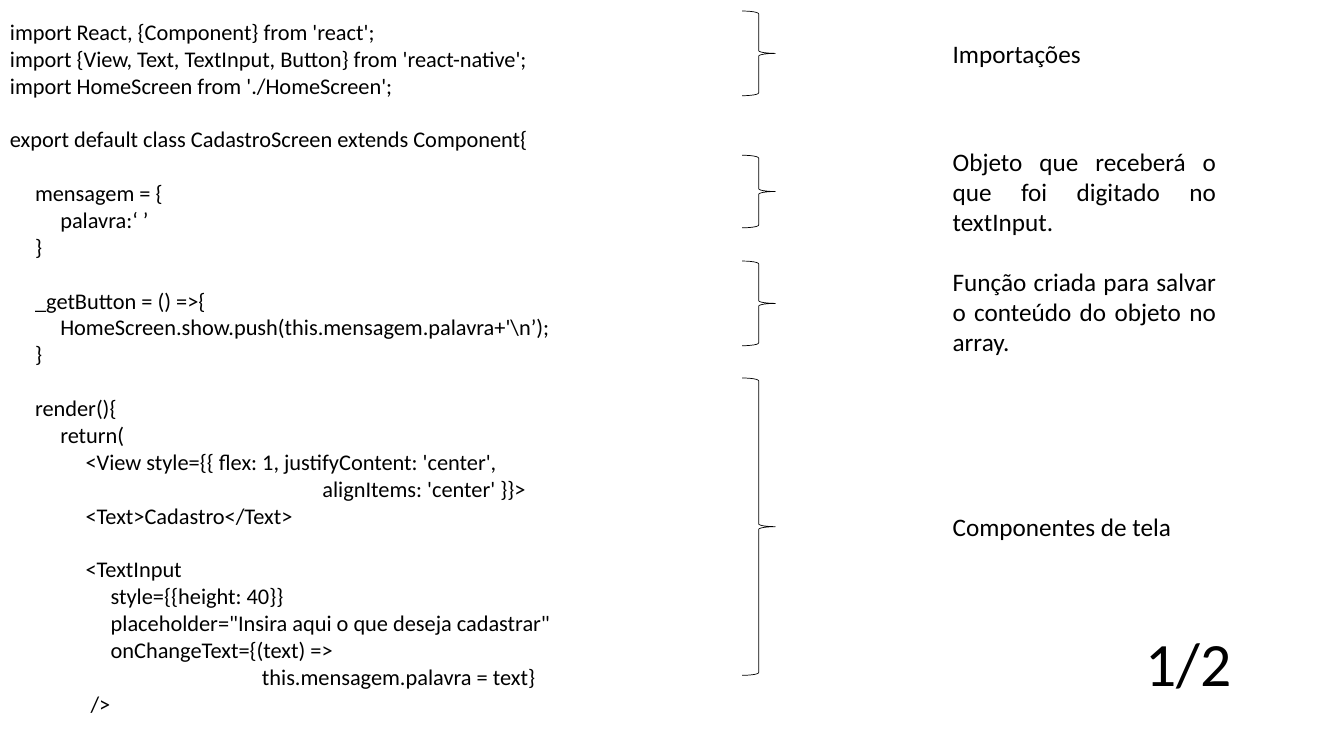
"""Build the slide that annotates the parts of a CadastroScreen component."""
from dataclasses import dataclass

from pptx import Presentation
from pptx.dml.color import RGBColor
from pptx.enum.shapes import MSO_SHAPE
from pptx.enum.text import MSO_ANCHOR, PP_ALIGN
from pptx.slide import Slide
from pptx.text.text import _Paragraph
from pptx.util import Inches, Pt

RIGHT_BRACE = MSO_SHAPE.RIGHT_BRACE
LEFT, CENTER, JUSTIFY = PP_ALIGN.LEFT, PP_ALIGN.CENTER, PP_ALIGN.JUSTIFY
TOP, MIDDLE = MSO_ANCHOR.TOP, MSO_ANCHOR.MIDDLE
BLACK = RGBColor(0x00, 0x00, 0x00)
WHITE = RGBColor(0xFF, 0xFF, 0xFF)
FONT = "Calibri"
TITLE_ONLY_LAYOUT = 5
COLUMN_WIDTH = 0.05
BLANK_LINE = Pt(19.2)


@dataclass
class CodeLine:
    text: str
    column: int = 0
    starts_block: bool = False


@dataclass
class Annotation:
    text: str
    brace_top: float
    brace_height: float
    text_top: float
    text_width: float
    text_height: float
    alignment: PP_ALIGN = LEFT


CODE_LINES = [
    CodeLine("import React, {Component} from 'react';"),
    CodeLine("import {View, Text, TextInput, Button} from 'react-native';"),
    CodeLine("import HomeScreen from './HomeScreen';"),
    CodeLine("export default class CadastroScreen extends Component{", 0, True),
    CodeLine("mensagem = {", 5, True),
    CodeLine("palavra:‘ ’", 10),
    CodeLine("}", 5),
    CodeLine("_getButton = () =>{", 5, True),
    CodeLine("HomeScreen.show.push(this.mensagem.palavra+'\\n’);", 10),
    CodeLine("}", 5),
    CodeLine("render(){", 5, True),
    CodeLine("return(", 10),
    CodeLine("<View style={{ flex: 1, justifyContent: 'center',", 15),
    CodeLine("alignItems: 'center' }}>", 62),
    CodeLine("<Text>Cadastro</Text>", 15),
    CodeLine("<TextInput", 15, True),
    CodeLine("style={{height: 40}}", 20),
    CodeLine('placeholder="Insira aqui o que deseja cadastrar"', 20),
    CodeLine("onChangeText={(text) =>", 20),
    CodeLine("this.mensagem.palavra = text}", 50),
    CodeLine("/>", 16),
]

ANNOTATIONS = [
    Annotation("Importações", 0.11, 0.84, 0.33, 1.8, 0.4),
    Annotation("Objeto que receberá o que foi digitado no textInput.",
               1.54, 0.72, 1.4, 2.81, 1.01, JUSTIFY),
    Annotation("Função criada para salvar o conteúdo do objeto no array.",
               2.59, 0.84, 2.59, 2.81, 1.01, JUSTIFY),
    Annotation("Componentes de tela", 3.75, 2.95, 5.02, 2.72, 0.4),
]


def add_run(paragraph: _Paragraph, text: str, size: int) -> None:
    run = paragraph.add_run()
    run.text = text
    run.font.name = FONT
    run.font.size = Pt(size)
    run.font.color.rgb = BLACK


def add_code(slide: Slide) -> None:
    box = slide.shapes.add_textbox(Inches(0), Inches(0.13), Inches(7.36), Inches(7.64))
    frame = box.text_frame
    frame.word_wrap = True
    frame.vertical_anchor = TOP
    for index, line in enumerate(CODE_LINES):
        paragraph = frame.add_paragraph() if index else frame.paragraphs[0]
        properties = paragraph._p.get_or_add_pPr()
        properties.set("marL", str(Inches(line.column * COLUMN_WIDTH)))
        properties.set("indent", "0")
        if line.starts_block:
            paragraph.space_before = BLANK_LINE
        add_run(paragraph, line.text, 16)


def add_annotation(slide: Slide, annotation: Annotation) -> None:
    brace = slide.shapes.add_shape(
        RIGHT_BRACE, Inches(7.36), Inches(annotation.brace_top),
        Inches(0.33), Inches(annotation.brace_height))
    brace.shadow.inherit = False
    brace.fill.background()
    brace.line.color.rgb = BLACK
    brace.line.width = Pt(0.5)

    box = slide.shapes.add_textbox(
        Inches(9.35), Inches(annotation.text_top),
        Inches(annotation.text_width), Inches(annotation.text_height))
    box.text_frame.word_wrap = True
    paragraph = box.text_frame.paragraphs[0]
    paragraph.alignment = annotation.alignment
    add_run(paragraph, annotation.text, 18)


def fill_title(slide: Slide, text: str) -> None:
    title = slide.shapes.title
    title.left, title.top = Inches(10.64), Inches(6.04)
    title.width, title.height = Inches(2.3), Inches(1.14)
    title.text_frame.vertical_anchor = MIDDLE
    paragraph = title.text_frame.paragraphs[0]
    paragraph.alignment = CENTER
    paragraph.line_spacing = 0.9
    add_run(paragraph, text, 44)


def main() -> None:
    presentation = Presentation()
    presentation.slide_width = Inches(13.33)
    presentation.slide_height = Inches(7.5)
    slide = presentation.slides.add_slide(presentation.slide_layouts[TITLE_ONLY_LAYOUT])
    slide.background.fill.solid()
    slide.background.fill.fore_color.rgb = WHITE
    add_code(slide)
    for annotation in ANNOTATIONS:
        add_annotation(slide, annotation)
    fill_title(slide, "1/2")
    presentation.save("out.pptx")


if __name__ == "__main__":
    main()
